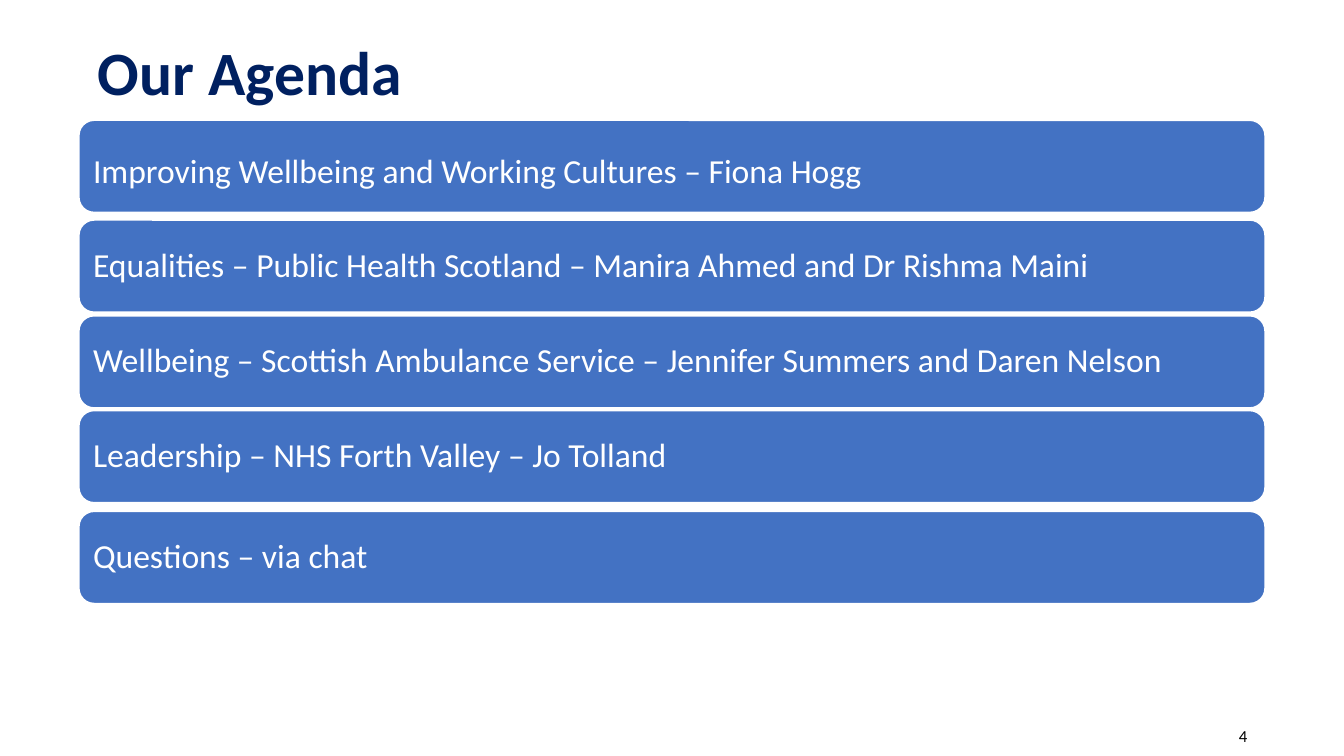
import pptx
import pptx.util
import pptx.dml.color
import pptx.enum.shapes
import pptx.enum.text

Inches = pptx.util.Inches
Pt = pptx.util.Pt
RGBColor = pptx.dml.color.RGBColor
ALIGN = pptx.enum.text.PP_ALIGN
ANCHOR = pptx.enum.text.MSO_ANCHOR

NAVY = RGBColor(0x00, 0x20, 0x60)
BLUE = RGBColor(0x43, 0x72, 0xC3)
WHITE = RGBColor(0xFF, 0xFF, 0xFF)
BLACK = RGBColor(0x00, 0x00, 0x00)

HEAD = {"size": Pt(44), "bold": True}
BODY = {"size": Pt(24)}
SMALL = {"size": Pt(12)}
FIRST = {"line_spacing": 1.5, "alignment": ALIGN.LEFT}
LATER = {"line_spacing": 0.9, "alignment": ALIGN.LEFT}

AGENDA = [
    (1.19, "Improving Wellbeing and Working Cultures – Fiona Hogg"),
    (2.18, "Equalities – Public Health Scotland – Manira Ahmed and Dr Rishma Maini"),
    (3.13, "Wellbeing – Scottish Ambulance Service – Jennifer Summers and Daren Nelson"),
    (4.07, "Leadership – NHS Forth Valley – Jo Tolland"),
    (5.07, "Questions – via chat"),
]


def apply(item, style):
    """Set each attribute in the style on the item."""
    for name, value in style.items():
        setattr(item, name, value)


def write(shape, text, color, font, para, anchor):
    """Fill a shape with one styled paragraph."""
    frame = shape.text_frame
    apply(frame, {"word_wrap": True, "vertical_anchor": anchor})
    line = frame.paragraphs[0]
    line.text = text
    apply(line, para)
    apply(line.font, {"name": "Calibri", **font})
    line.font.color.rgb = color


def label(slide, box, text, color, font, para, anchor):
    """Place a text box in the given box."""
    shape = slide.shapes.add_textbox(*map(Inches, box))
    write(shape, text, color, font, para, anchor)


def bar(slide, box, text, para, anchor):
    """Draw one rounded agenda bar in the given box."""
    kind = pptx.enum.shapes.MSO_SHAPE.ROUNDED_RECTANGLE
    shape = slide.shapes.add_shape(kind, *map(Inches, box))
    shape.shadow.inherit = False
    shape.fill.solid()
    shape.fill.fore_color.rgb = BLUE
    shape.line.color.rgb = WHITE
    shape.line.width = Pt(1.5)
    write(shape, text, WHITE, BODY, para, anchor)


def agenda(slide, left, width, height):
    """Draw the agenda bars down one column."""
    for i, (top, text) in enumerate(AGENDA):
        para, anchor = (LATER, ANCHOR.MIDDLE) if i else (FIRST, ANCHOR.TOP)
        bar(slide, (left, top, width, height), text, para, anchor)


def main():
    """Build and save the agenda slide."""
    deck = pptx.Presentation()
    apply(deck, {"slide_width": Inches(13.33), "slide_height": Inches(7.5)})
    slide = deck.slides.add_slide(deck.slide_layouts[6])
    label(slide, (0.87, 0.29, 11.59, 0.85), "Our Agenda", NAVY, HEAD, {}, ANCHOR.TOP)
    label(slide, (12.12, 7.1, 0.35, 0.4), "4", BLACK, SMALL,
          {"alignment": ALIGN.RIGHT}, ANCHOR.MIDDLE)
    agenda(slide, 0.78, 11.77, 0.92)
    deck.save("out.pptx")


if __name__ == "__main__":
    main()
